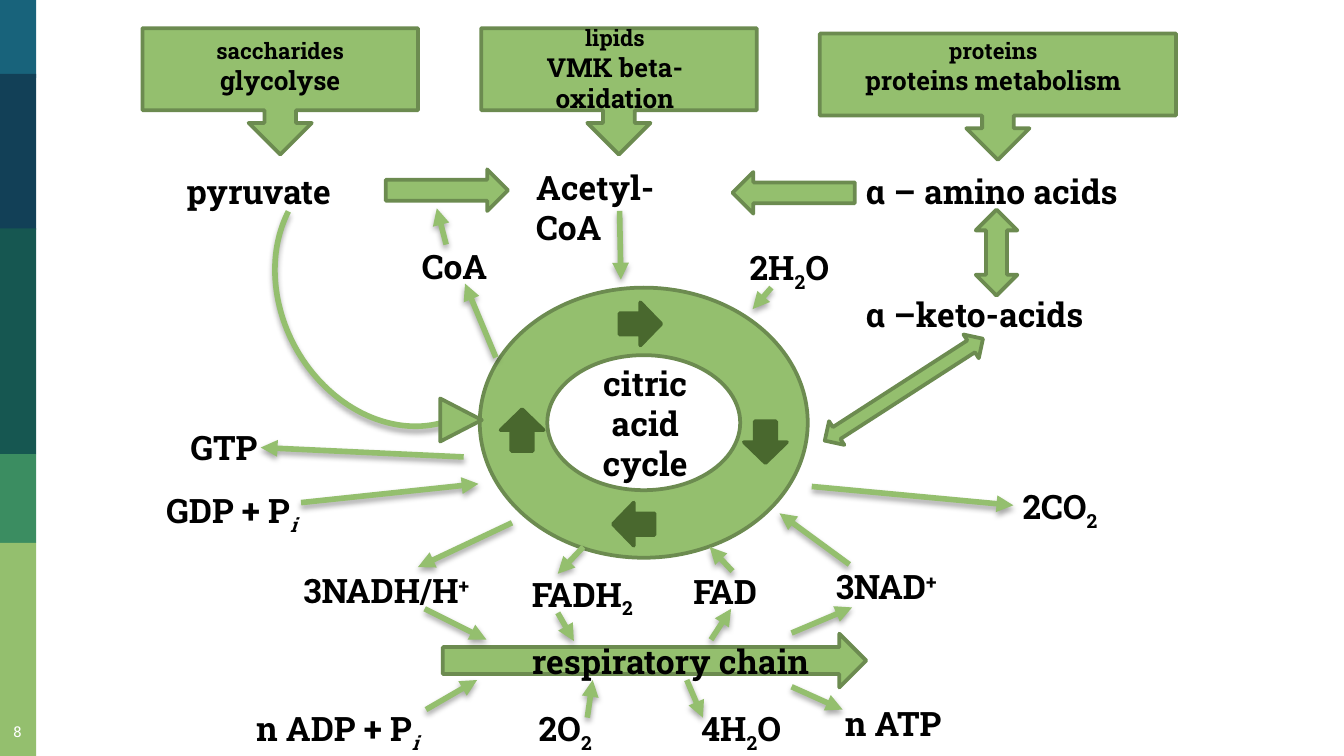
import pptx
import pptx.dml.color
import pptx.enum.shapes
import pptx.enum.text
import pptx.oxml
import pptx.oxml.ns
import pptx.util

SHAPE = pptx.enum.shapes.MSO_SHAPE
ALIGN = pptx.enum.text.PP_ALIGN
GREEN, EDGE, DARK = "94BF6E", "6C8B50", "49682E"
COLUMNS, ROWS = 100, 56.25

# The first letter of a run may mark it as raised or lowered
MARKS = {
    "_": {"baseline": "-25000"},
    "^": {"baseline": "30000"},
    "~": {"baseline": "-25000", "i": "1"},
}
SOFT_SHADOW = (
    '<a:effectLst %s><a:outerShdw blurRad="39400" dist="22900" dir="5400000" rotWithShape="0">'
    '<a:srgbClr val="000000"><a:alpha val="35000"/></a:srgbClr></a:outerShdw></a:effectLst>'
    % pptx.oxml.ns.nsdecls("a")
)
ARROWHEAD = '<a:tailEnd %s type="triangle"/>' % pptx.oxml.ns.nsdecls("a")


def color(hex_string):
    return pptx.dml.color.RGBColor.from_string(hex_string)


def grid(*cells):
    """Grid columns or rows (100 columns across the slide) as lengths."""
    return [pptx.util.Inches(cell / 10) for cell in cells]


class Diagram:
    font = {"name": "Roboto Slab", "bold": True}
    frame = {
        "word_wrap": True,
        "auto_size": pptx.enum.text.MSO_AUTO_SIZE.SHAPE_TO_FIT_TEXT,
    }

    def __init__(self, slide):
        self.slide = slide

    def shape(self, kind, box, fill=GREEN, edge=EDGE, turn=0):
        part = self.slide.shapes.add_shape(kind, *grid(*box))
        part.shadow.inherit = False
        part.rotation = turn
        part.fill.solid()
        part.fill.fore_color.rgb = color(fill)
        if edge:
            part.line.color.rgb = color(edge)
            part.line.width = pptx.util.Pt(2)
        else:
            part.line.fill.background()
        return part

    def cast_shadow(self, part):
        part.line.color.rgb = color(GREEN)
        part.line.width = pptx.util.Pt(3)
        properties = part._element.spPr
        for old in properties.findall(pptx.oxml.ns.qn("a:effectLst")):
            properties.remove(old)
        properties.append(pptx.oxml.parse_xml(SOFT_SHADOW))

    def arc(self, box, turn, start, end):
        curve = self.shape(SHAPE.ARC, box, turn=turn)
        curve.fill.background()
        curve.adjustments[0], curve.adjustments[1] = start, end
        self.cast_shadow(curve)

    def arrow(self, start, end):
        line = self.slide.shapes.add_connector(
            pptx.enum.shapes.MSO_CONNECTOR.STRAIGHT, *grid(*start, *end))
        self.cast_shadow(line)
        line.line._get_or_add_ln().append(pptx.oxml.parse_xml(ARROWHEAD))

    def text(self, box, paragraphs, align=ALIGN.LEFT, ink="000000", bold=True, **frame_format):
        """Each paragraph is a size followed by its runs."""
        frame = self.slide.shapes.add_textbox(*grid(*box)).text_frame
        for key, value in {**self.frame, **frame_format}.items():
            setattr(frame, key, value)
        for index, (size, *runs) in enumerate(paragraphs):
            paragraph = frame.add_paragraph() if index else frame.paragraphs[0]
            paragraph.alignment = align
            font_format = {**self.font, "size": pptx.util.Pt(size), "bold": bold}
            for words in runs:
                mark = MARKS.get(words[0], {})
                run = paragraph.add_run()
                run.text = words[1:] if mark else words
                for key, value in font_format.items():
                    setattr(run.font, key, value)
                run.font.color.rgb = color(ink)
                for key, value in mark.items():
                    run._r.get_or_add_rPr().set(key, value)

    def label(self, left, top, width, *runs):
        self.text((left, top, width, 4), [(18, *runs)])


def main():
    deck = pptx.Presentation()
    deck.slide_width, deck.slide_height = grid(COLUMNS, ROWS)
    diagram = Diagram(deck.slides.add_slide(deck.slide_layouts[6]))

    # Colour bands at the left edge, with the slide number
    bands = [("18637B", 0, 5.8), ("124057", 5.5, 11.6), ("165751", 17, 16.8),
             ("3B8D61", 33.8, 6.6), (GREEN, 40.4, 15.85)]
    for fill, top, height in bands:
        diagram.shape(SHAPE.RECTANGLE, (0, top, 2.7, height), fill, None)
    margin = pptx.util.Inches(0.1)
    diagram.text((-0.6, 52.7, 3.8, 3.5), [(8, "8")], ALIGN.CENTER, "FFFFFF", False,
                 auto_size=pptx.enum.text.MSO_AUTO_SIZE.NONE,
                 vertical_anchor=pptx.enum.text.MSO_ANCHOR.MIDDLE,
                 margin_top=margin, margin_bottom=margin)

    # Cycle ring and its direction arrows
    diagram.shape(SHAPE.DONUT, (35.7, 21.4, 24.4, 20.1))
    for left, top, turn in [(46.1, 22.5, 0), (55.4, 31.3, 90),
                            (45.6, 37.4, 180), (37.3, 30.4, 270)]:
        diagram.shape(SHAPE.RIGHT_ARROW, (left, top, 3.1, 3.2), DARK, DARK, turn)
    diagram.text((41.4, 26.5, 13.2, 10.1), [(18, "citric acid cycle")], ALIGN.CENTER)

    # Nutrient callouts: box, then text box, then wording
    nutrients = [
        ((10.6, 2.1, 20.5, 9.4), (11, 2.3, 19.7, 5.4), "saccharides", "glycolyse"),
        ((35.8, 2.1, 20.5, 9.4), (35.9, 1.3, 19.7, 7.7), "lipids", "VMK beta-oxidation"),
        ((61, 2.5, 26.5, 9.4), (61.7, 2.3, 24.4, 7.7), "proteins", "proteins metabolism"),
    ]
    for callout, text_box, nutrient, pathway in nutrients:
        diagram.shape(SHAPE.DOWN_ARROW_CALLOUT, callout)
        diagram.text(text_box, [(12, nutrient), (14, pathway)], ALIGN.CENTER)

    # Block arrows: respiratory chain, to acetyl-CoA, around keto-acids
    for kind, box, turn in [
        (SHAPE.DOWN_ARROW, (46.7, 33.4, 4, 31.5), 270),
        (SHAPE.DOWN_ARROW, (31.7, 9.6, 3.1, 9.1), 270),
        (SHAPE.DOWN_ARROW, (57.5, 9.8, 3.1, 9.1), 90),
        (SHAPE.UP_DOWN_ARROW, (72.6, 15.6, 3.1, 6.4), 0),
        (SHAPE.UP_DOWN_ARROW, (66.2, 22, 2.1, 14), 57.2),
    ]:
        diagram.shape(kind, box, turn=turn)

    # Curve from pyruvate into the cycle
    diagram.arc((20.9, 11.3, 17.1, 20.8), 151.8, 162, 38.97)
    diagram.shape(SHAPE.FLOWCHART_MERGE, (32.7, 29.7, 3.2, 3.1), turn=270)

    # Thin arrows
    for start, end in [
        # into and out of the cycle
        ((34.5, 34), (19.4, 33.3)), ((22.4, 37.4), (35.6, 36)),
        ((36.9, 26.6), (34.6, 21.1)), ((33.2, 18.2), (32.5, 15.5)),
        ((46.1, 15.7), (46.2, 20.8)), ((57.4, 21.4), (56, 23)),
        ((60.4, 36.2), (75.4, 37.6)),
        # between the cycle and the carriers
        ((38.1, 38.9), (31.1, 42.2)), ((43.4, 40.7), (41.5, 42.7)),
        ((54.5, 42.5), (52.8, 40.7)), ((63.2, 42), (58, 38.2)),
        # between the carriers and the respiratory chain
        ((31.6, 45.3), (36.2, 47.6)), ((41.5, 45.6), (42.7, 47.7)),
        ((52.9, 47.6), (54.4, 45.3)), ((58.9, 47.1), (63.4, 45.2)),
        # below the respiratory chain
        ((31.7, 52.8), (35.5, 50.6)), ((43.7, 53.4), (44.1, 50.6)),
        ((51.1, 50.6), (52.3, 53.4)), ((58.9, 51.1), (62.7, 52.8)),
    ]:
        diagram.arrow(start, end)

    # Substances: left, top, width, runs
    for substance in [
        (12.9, 12.2, 16, "pyruvate"), (38.9, 11.9, 15.6, "Acetyl-CoA"),
        (63.4, 12.2, 24.1, "α – amino acids"), (63.4, 21.4, 21.6, "α –keto-acids"),
        (30.4, 17.8, 6.9, "CoA"), (54.8, 17.9, 8.1, "2H", "_2", "O"),
        (13.2, 31.3, 7, "GTP"), (11.4, 36, 11.8, "GDP + P", "~i"),
        (75.1, 35.7, 7.8, "2CO", "_2"),
        (21.6, 41.9, 14.7, "3NADH/H", "^+"), (38.6, 42.2, 11.1, "FADH", "_2"),
        (50.6, 42, 11.1, "FAD"), (61.2, 41.6, 9.8, "3NAD", "^+"),
        (38.6, 47.2, 24.4, "respiratory chain"),
        (18.1, 52.2, 14.2, "n ADP + P", "~i"), (39.1, 52.2, 8.1, "2O", "_2"),
        (51.2, 52.2, 8.1, "4H", "_2", "O"), (61.9, 51.8, 9.4, "n ATP"),
    ]:
        diagram.label(*substance)

    deck.save("out.pptx")


if __name__ == "__main__":
    main()
